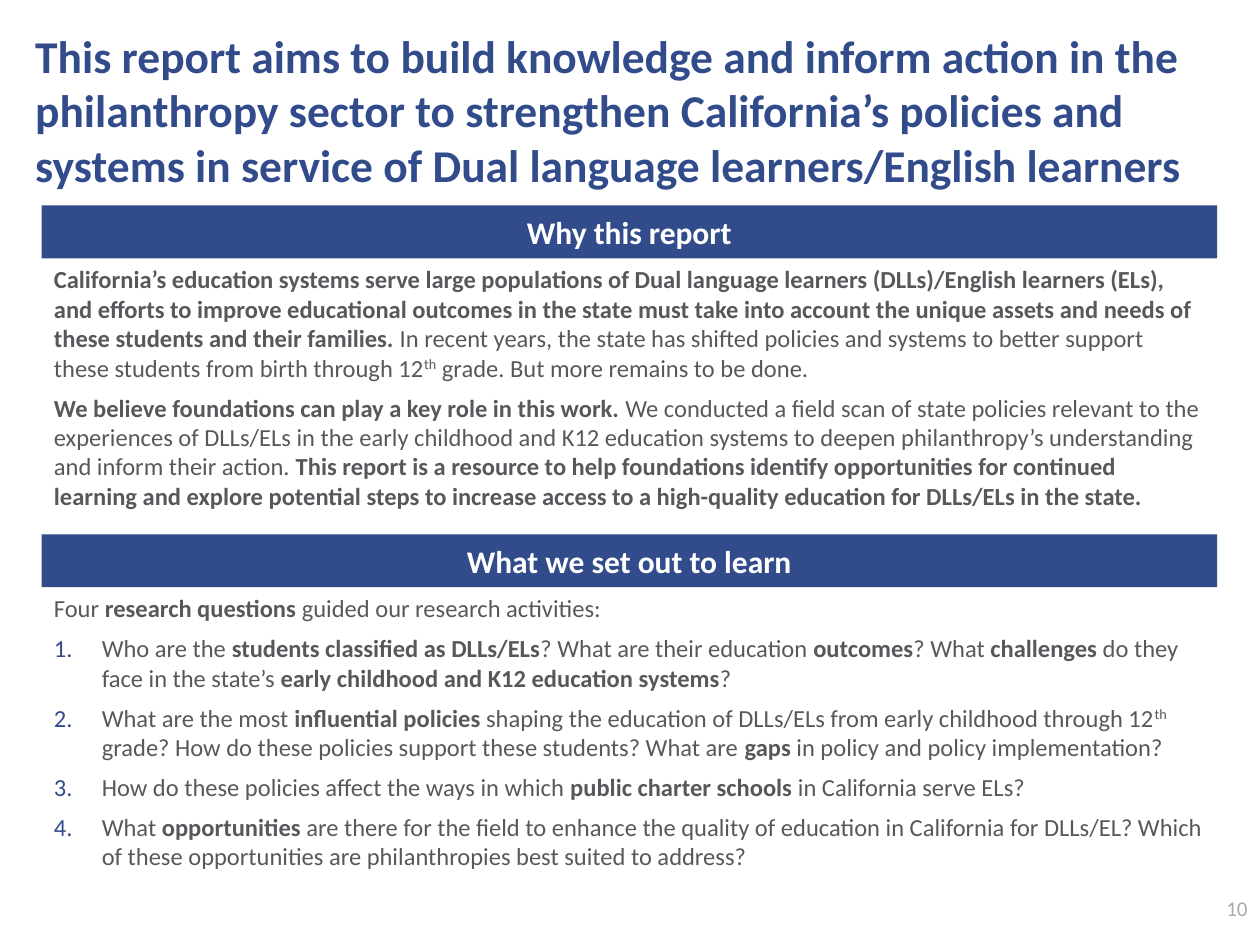
from lxml.etree import SubElement
from pptx import Presentation
from pptx.dml.color import RGBColor
from pptx.enum.shapes import MSO_SHAPE
from pptx.enum.text import MSO_ANCHOR, PP_ALIGN
from pptx.oxml.ns import qn
from pptx.util import Inches, Pt

BLUE = RGBColor(0x32, 0x4B, 0x8B)
GREY = RGBColor(0x56, 0x58, 0x5C)
PALE = RGBColor(0xA9, 0xA9, 0xA9)
WHITE = RGBColor(0xFF, 0xFF, 0xFF)
FONT = "Calibri"
BAR = 0.42
BOLD, RAISE = "*", "^"

TITLE = (
    "This report aims to build knowledge and inform action in the philanthropy "
    "sector to strengthen California’s policies and systems in service of "
    "Dual language learners/English learners"
)
REASONS = [
    "*California’s education systems serve large populations of Dual language "
    "learners (DLLs)/English learners (ELs), and efforts to improve educational "
    "outcomes in the state must take into account the unique assets and needs of "
    "these students and their families. *In recent years, the state has shifted "
    "policies and systems to better support these students from birth through "
    "12^th^ grade. But more remains to be done.",
    "*We believe foundations can play a key role in this work. *We conducted a "
    "field scan of state policies relevant to the experiences of DLLs/ELs in the "
    "early childhood and K12 education systems to deepen philanthropy’s "
    "understanding and inform their action.* This report is a resource to help "
    "foundations identify opportunities for continued learning and explore "
    "potential steps to increase access to a high-quality education for DLLs/ELs "
    "in the state.*",
]
INTRO = "Four *research questions *guided our research activities:"
ASKS = [
    "Who are the *students classified as DLLs/ELs*? What are their education "
    "*outcomes*? What *challenges* do they face in the state’s *early childhood "
    "and K12 education systems*?",
    "What are the most *influential policies *shaping the education of DLLs/ELs "
    "from early childhood through 12^th^ grade? How do these policies support "
    "these students? What are *gaps* in policy and policy implementation?",
    "How do these policies affect the ways in which *public charter schools *in "
    "California serve ELs?",
    "What *opportunities* are there for the field to enhance the quality of "
    "education in California for DLLs/EL? Which of these opportunities are "
    "philanthropies best suited to address?",
]


def set_font(para, size, color, bold=None):
    font = para.font
    font.name, font.size, font.bold = FONT, Pt(size), bold
    font.color.rgb = color


def add_runs(para, text):
    for i, part in enumerate(text.split(BOLD)):
        for j, piece in enumerate(part.split(RAISE)):
            if piece:
                run = para.add_run()
                run.text = piece
                run.font.bold = i % 2 == 1
                if j % 2:
                    run._r.get_or_add_rPr().set("baseline", "30000")


def add_number(para):
    props = para._p.get_or_add_pPr()
    props.set("marL", str(Inches(0.38)))
    props.set("indent", str(-Inches(0.38)))
    tint = SubElement(props, qn("a:buClr"))
    SubElement(tint, qn("a:srgbClr")).set("val", str(BLUE))
    SubElement(props, qn("a:buFont")).set("typeface", "+mj-lt")
    SubElement(props, qn("a:buAutoNum")).set("type", "arabicPeriod")


def add_box(slide, left, top, width, height):
    box = slide.shapes.add_textbox(*map(Inches, (left, top, width, height)))
    box.text_frame.word_wrap = True
    return box.text_frame


def add_title(slide, left, top, width, height):
    frame = add_box(slide, left, top, width, height)
    frame.margin_left = frame.margin_right = 0
    frame.margin_top = frame.margin_bottom = 0
    frame.text = TITLE
    set_font(frame.paragraphs[0], 26, BLUE, True)


def add_bar(slide, left, top, width, text):
    bar = slide.shapes.add_shape(
        MSO_SHAPE.RECTANGLE, *map(Inches, (left, top, width, BAR))
    )
    bar.shadow.inherit = False
    bar.fill.solid()
    bar.fill.fore_color.rgb = BLUE
    bar.line.fill.background()
    frame = bar.text_frame
    frame.vertical_anchor = MSO_ANCHOR.MIDDLE
    frame.text = text
    para = frame.paragraphs[0]
    para.alignment = PP_ALIGN.CENTER
    set_font(para, 18, WHITE, True)


def add_section(slide, left, top, width, height, head, plain, listed=()):
    add_bar(slide, left, top, width, head)
    frame = add_box(slide, left, top + BAR, width, height - BAR)
    for i, text in enumerate([*plain, *listed]):
        para = frame.add_paragraph() if i else frame.paragraphs[0]
        para.space_after = Pt(6)
        if i >= len(plain):
            add_number(para)
        set_font(para, 14, GREY)
        add_runs(para, text)


def add_page(slide, left, top, width, height):
    frame = add_box(slide, left, top, width, height)
    frame.vertical_anchor = MSO_ANCHOR.MIDDLE
    frame.text = "10"
    para = frame.paragraphs[0]
    para.alignment = PP_ALIGN.RIGHT
    set_font(para, 12, PALE)


def main():
    deck = Presentation()
    deck.slide_width, deck.slide_height = Inches(10), Inches(7.5)
    slide = deck.slides.add_slide(deck.slide_layouts[6])
    add_title(slide, 0.28, 0.22, 9.43, 1.35)
    add_section(slide, 0.33, 1.63, 9.33, 2.49, "Why this report", REASONS)
    add_section(
        slide, 0.33, 4.24, 9.33, 2.74, "What we set out to learn", [INTRO], ASKS
    )
    add_page(slide, 9.33, 7.06, 0.67, 0.3)
    deck.save("out.pptx")


if __name__ == "__main__":
    main()
